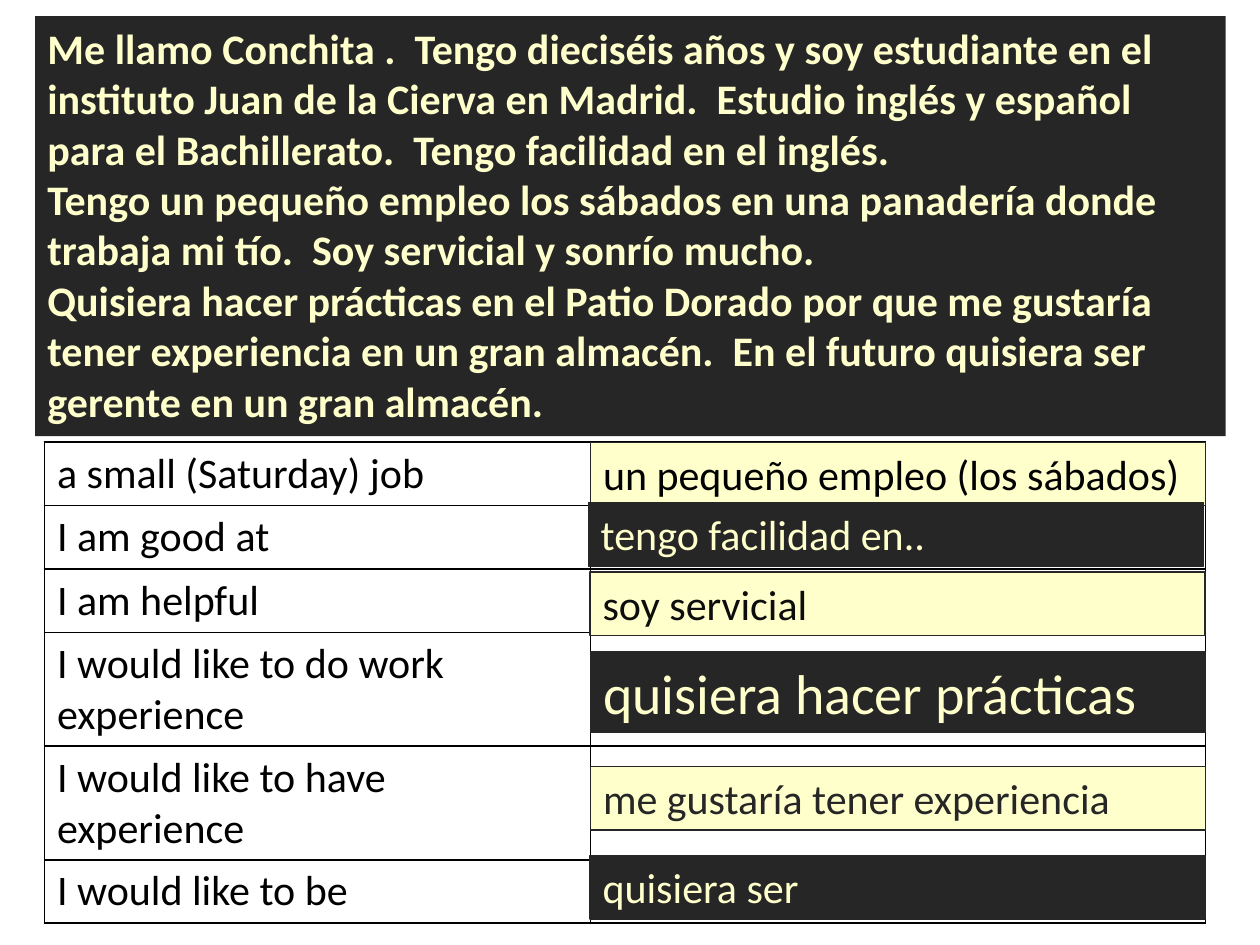
from lxml import etree
from pptx import Presentation
from pptx.dml.color import RGBColor
from pptx.enum.text import MSO_AUTO_SIZE
from pptx.oxml.ns import qn
from pptx.util import Pt

FIT_TEXT = MSO_AUTO_SIZE.SHAPE_TO_FIT_TEXT
BLACK = RGBColor(0x00, 0x00, 0x00)
NEAR_BLACK = RGBColor(0x0D, 0x0D, 0x0D)
CHARCOAL = RGBColor(0x26, 0x26, 0x26)
CREAM = RGBColor(0xFF, 0xFF, 0xCC)

PASSAGE = [
    "Me llamo Conchita .  Tengo dieciséis años y soy estudiante en el "
    "instituto Juan de la Cierva en Madrid.  Estudio inglés y español para el "
    "Bachillerato.  Tengo facilidad en el inglés.\v"
    "Tengo un pequeño empleo los sábados en una panadería donde trabaja mi "
    "tío.  Soy servicial y sonrío mucho.",
    "Quisiera hacer prácticas en el Patio Dorado por que me gustaría tener "
    "experiencia en un gran almacén.  En el futuro quisiera ser gerente en un "
    "gran almacén.",
]
PHRASES = [
    ("a small (Saturday) job", 36.2),
    ("I am good at", 36.2),
    ("I am helpful", 36.2),
    ("I would like to do work experience", 65),
    ("I would like to have experience", 65),
    ("I would like to be", 36.2),
]
ANSWERS = [
    ("un pequeño empleo (los sábados)", 337.5, 252.7, 36.3, CREAM, BLACK, 24),
    ("soy servicial", 337.2, 326.9, 36.3, CREAM, NEAR_BLACK, 24),
    ("quisiera hacer prácticas", 337.5, 372.5, 46, CHARCOAL, CREAM, 32),
    ("me gustaría tener experiencia", 337.5, 438, 36.3, CREAM, CHARCOAL, 24),
    ("quisiera ser", 337.2, 488.9, 36.3, CHARCOAL, CREAM, 24),
    ("tengo facilidad en..", 336.2, 287.3, 36.3, CHARCOAL, CREAM, 24),
]
ANSWER_WIDTH = 351.4


def write_text(text_frame, paragraphs, color, size=24, bold=False):
    text_frame.text = "\n".join(paragraphs)
    font_format = {"name": "Calibri", "size": Pt(size), "bold": bold}
    for paragraph in text_frame.paragraphs:
        for run in paragraph.runs:
            for name, value in font_format.items():
                setattr(run.font, name, value)
            run.font.color.rgb = color


def add_panel(slide, box, paragraphs, fill, color, size=24, bold=False):
    panel = slide.shapes.add_textbox(*map(Pt, box))
    panel.fill.solid()
    panel.fill.fore_color.rgb = fill
    write_text(panel.text_frame, paragraphs, color, size, bold)
    for name, value in {"word_wrap": True, "auto_size": FIT_TEXT}.items():
        setattr(panel.text_frame, name, value)
    return panel


def add_answers(slide):
    for text, left, top, height, fill, color, size in ANSWERS:
        box = (left, top, ANSWER_WIDTH, height)
        panel = add_panel(slide, box, [text], fill, color, size)
        panel.line.color.rgb = CHARCOAL
        panel.line.width = Pt(0.75)


def set_borders(cell):
    properties = cell._tc.get_or_add_tcPr()
    for index, side in enumerate(("lnL", "lnR", "lnT", "lnB")):
        line = etree.Element(qn(f"a:{side}"), w=str(Pt(1)))
        fill = etree.SubElement(line, qn("a:solidFill"))
        etree.SubElement(fill, qn("a:srgbClr"), val=str(BLACK))
        properties.insert(index, line)


def add_phrase_table(slide, box, column_widths):
    table = slide.shapes.add_table(
        len(PHRASES), len(column_widths), *map(Pt, box)
    ).table
    for name in ("first_row", "horz_banding"):
        setattr(table, name, False)
    for column, width in zip(table.columns, column_widths):
        column.width = Pt(width)
    for row, (phrase, height) in zip(table.rows, PHRASES):
        row.height = Pt(height)
        write_text(row.cells[0].text_frame, [phrase], BLACK)
        for cell in row.cells:
            cell.fill.background()
            set_borders(cell)


def main():
    presentation = Presentation()
    presentation.slide_width = Pt(720)
    presentation.slide_height = Pt(540)
    slide = presentation.slides.add_slide(presentation.slide_layouts[6])
    add_panel(slide, (20, 9.2, 680.4, 240), PASSAGE, CHARCOAL, CREAM, bold=True)
    add_phrase_table(slide, (25.4, 252.7, 663.4, 274), (312, 351.4))
    add_answers(slide)
    presentation.save("out.pptx")


if __name__ == "__main__":
    main()
